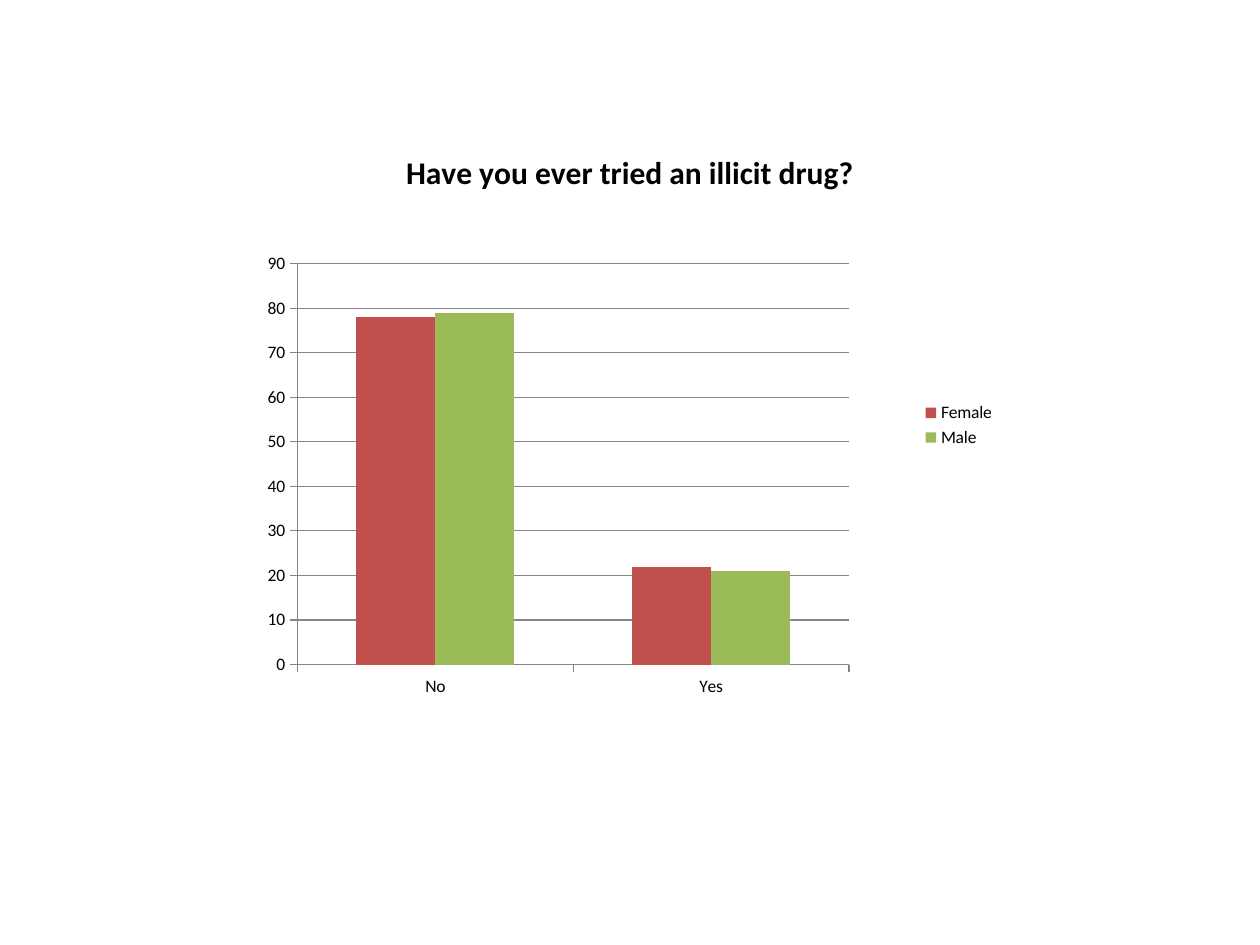
from lxml.etree import SubElement
from pptx import Presentation
from pptx.chart.data import CategoryChartData
from pptx.dml.color import RGBColor
from pptx.enum.chart import XL_CHART_TYPE as ChartType
from pptx.enum.chart import XL_LEGEND_POSITION as LegendPosition
from pptx.enum.chart import XL_TICK_MARK as TickMark
from pptx.oxml.ns import qn
from pptx.util import Inches, Pt

FONT = "Calibri"
BLACK, GREY = "000000", "868686"
TITLE = "Have you ever tried an illicit drug?"
ANSWERS = ["No", "Yes"]
SERIES = [("Female", (78, 22), "C0504D"), ("Male", (79, 21), "9BBB59")]
PLOT_AREA = {"x": 0.06, "y": 0.23, "w": 0.73, "h": 0.67}


def rgb(color):
    return RGBColor.from_string(color)


def style_font(font, size, bold=False):
    font.name = FONT
    font.size = Pt(size)
    font.bold = bold
    font.color.rgb = rgb(BLACK)


def style_line(line):
    line.color.rgb = rgb(GREY)
    line.width = Pt(0.75)


def set_title(chart, text):
    tf = chart.chart_title.text_frame
    tf.text = text
    style_font(tf.paragraphs[0].runs[0].font, 18, bold=True)
    chart.chart_title.include_in_layout = False


def style_axis(axis):
    axis.major_tick_mark = TickMark.OUTSIDE
    axis.minor_tick_mark = TickMark.NONE
    style_line(axis.format.line)


def place_plot(chart, fractions):
    """Fix the inner plot area, in fractions of the chart's size."""
    plot_area = chart._chartSpace.chart.plotArea
    layout = plot_area.find(qn("c:layout"))
    if layout is None:
        layout = plot_area.makeelement(qn("c:layout"))
        plot_area.insert(0, layout)
    manual = SubElement(layout, qn("c:manualLayout"))
    settings = {"layoutTarget": "inner", "xMode": "edge", "yMode": "edge", **fractions}
    for tag, value in settings.items():
        SubElement(manual, qn(f"c:{tag}")).set("val", str(value))


def add_column_chart(slide):
    data = CategoryChartData()
    data.categories = ANSWERS
    for name, values, _ in SERIES:
        data.add_series(name, values)
    chart = slide.shapes.add_chart(
        ChartType.COLUMN_CLUSTERED, Inches(2), Inches(1), Inches(6), Inches(4.75), data
    ).chart
    style_font(chart.font, 10)
    set_title(chart, TITLE)

    plot = chart.plots[0]
    plot.gap_width = 150
    plot.overlap = 0
    plot.vary_by_categories = False
    for series, (_, _, color) in zip(plot.series, SERIES):
        series.format.fill.solid()
        series.format.fill.fore_color.rgb = rgb(color)

    style_axis(chart.category_axis)
    value_axis = chart.value_axis
    style_axis(value_axis)
    value_axis.minimum_scale = 0
    value_axis.maximum_scale = 90
    value_axis.major_unit = 10
    value_axis.has_major_gridlines = True
    style_line(value_axis.major_gridlines.format.line)

    chart.has_legend = True
    chart.legend.position = LegendPosition.RIGHT
    chart.legend.include_in_layout = False
    place_plot(chart, PLOT_AREA)


def main():
    prs = Presentation()
    prs.slide_width = Inches(10)
    prs.slide_height = Inches(7.5)
    slide = prs.slides.add_slide(prs.slide_layouts[6])
    add_column_chart(slide)
    prs.save("out.pptx")


if __name__ == "__main__":
    main()
